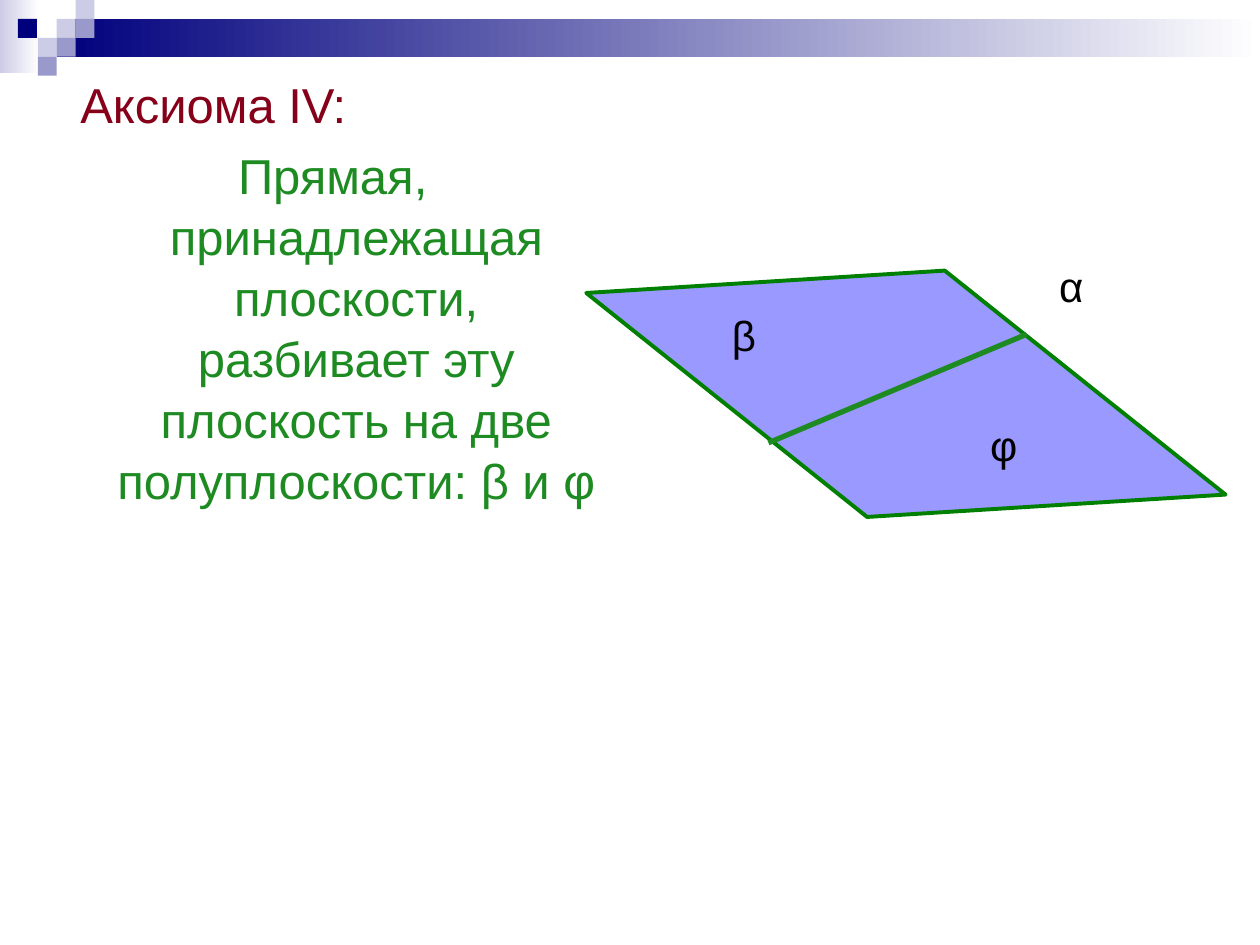
import pptx
import pptx.util
import pptx.dml.color
import pptx.enum.shapes
import pptx.enum.text
import pptx.oxml.ns
import lxml.etree

Inches, Pt = pptx.util.Inches, pptx.util.Pt
SHAPES = pptx.enum.shapes.MSO_SHAPE
COLORS = {
    "navy": "00007D", "lavender": "CCCCE6", "violet": "9999CC", "white": "FFFFFF",
    "heading": "86001A", "green": "1D8B22", "plane": "9999FF", "edge": "008000",
    "label": "000000",
}
FONT = "Arial"
WIDTH, HEIGHT = 10, 7.5
CELL = 0.15


def color(name):
    """Return the named palette colour."""
    return pptx.dml.color.RGBColor.from_string(COLORS[name])


def format_run(run, size, color_name):
    """Set the font of a run."""
    run.font.name = FONT
    run.font.size = Pt(size)
    run.font.color.rgb = color(color_name)


def add_plain_shape(slide, kind, box, fill_names):
    """Add an unlined shape with a solid fill or a horizontal gradient."""
    shape = slide.shapes.add_shape(kind, *map(Inches, box))
    shape.shadow.inherit = False
    shape.line.fill.background()
    if len(fill_names) == 1:
        shape.fill.solid()
        shape.fill.fore_color.rgb = color(fill_names[0])
    else:
        shape.fill.gradient()
        shape.fill.gradient_angle = 0
        for stop, name in zip(shape.fill.gradient_stops, fill_names):
            stop.color.rgb = color(name)
    return shape


def add_header(slide, box):
    """Draw the gradient bands and the checkered squares in the header box."""
    left, top, width, height = box
    bar_left = 3 * CELL
    bands = [
        ((left, top, 0.31, height), ("lavender", "white")),
        ((left + bar_left, top + CELL, width - bar_left, 2 * CELL), ("navy", "white")),
    ]
    for band, fill_names in bands:
        add_plain_shape(slide, SHAPES.RECTANGLE, band, fill_names)
    squares = [
        (3, 1, "lavender"), (4, 0, "lavender"), (4, 1, "violet"), (2, 2, "lavender"),
        (0.95, 1, "navy"), (3, 2, "violet"), (2, 3, "violet"),
    ]
    for column, row, name in squares:
        square = (left + column * CELL, top + row * CELL, CELL, CELL)
        add_plain_shape(slide, SHAPES.RECTANGLE, square, (name,))


def add_axiom(slide, box):
    """Fill the body placeholder with the axiom's heading and statement."""
    body = slide.placeholders[1]
    body.left, body.top, body.width, body.height = map(Inches, box)
    frame = body.text_frame
    frame.text = (
        " Аксиома IV:\n"
        "Прямая, принадлежащая плоскости, разбивает эту плоскость "
        "на две полуплоскости: β и φ"
    )
    frame.auto_size = pptx.enum.text.MSO_AUTO_SIZE.NONE
    alignments = (pptx.enum.text.PP_ALIGN.LEFT, pptx.enum.text.PP_ALIGN.CENTER)
    for paragraph, alignment, name in zip(frame.paragraphs, alignments, ("heading", "green")):
        paragraph.alignment = alignment
        paragraph.line_spacing = 1.04
        properties = paragraph.runs[0]._r.getparent().get_or_add_pPr()
        lxml.etree.SubElement(properties, pptx.oxml.ns.qn("a:buNone"))
        format_run(paragraph.runs[0], 28, name)


def add_plane(slide, box):
    """Draw the plane, its dividing line and the Greek labels."""
    left, top, width, height = box

    def place(across, down):
        return Inches(left + across * width), Inches(top + down * height)

    plane = add_plain_shape(slide, SHAPES.DIAMOND, box, ("plane",))
    plane.rotation = 197.5
    plane.line.color.rgb = color("edge")
    plane.line.width = Pt(2.25)

    divider = slide.shapes.add_connector(
        pptx.enum.shapes.MSO_CONNECTOR.STRAIGHT, *place(0.295, 0.69), *place(0.68, 0.27)
    )
    divider.line.color.rgb = color("green")
    divider.line.width = Pt(3)
    lxml.etree.SubElement(divider._element.spPr, pptx.oxml.ns.qn("a:effectLst"))

    labels = [("β", 0.222, 0.15, 0.39), ("α", 0.71, -0.04, 0.39), ("φ", 0.607, 0.575, 0.42)]
    for text, across, down, label_width in labels:
        label = slide.shapes.add_textbox(*place(across, down), Inches(label_width), Inches(0.5))
        frame = label.text_frame
        frame.text = text
        frame.word_wrap = False
        frame.auto_size = pptx.enum.text.MSO_AUTO_SIZE.SHAPE_TO_FIT_TEXT
        format_run(frame.paragraphs[0].runs[0], 24, "label")


def main():
    """Build and save the slide."""
    presentation = pptx.Presentation()
    presentation.slide_width, presentation.slide_height = Inches(WIDTH), Inches(HEIGHT)
    slide = presentation.slides.add_slide(presentation.slide_layouts[1])
    title = slide.shapes.title._element
    title.getparent().remove(title)
    add_header(slide, (0, 0, WIDTH, 0.58))
    add_axiom(slide, (0.43, 0.52, 4.42, 6.06))
    add_plane(slide, (4.53, 2.1, 5.32, 2.05))
    presentation.save("out.pptx")


if __name__ == "__main__":
    main()
